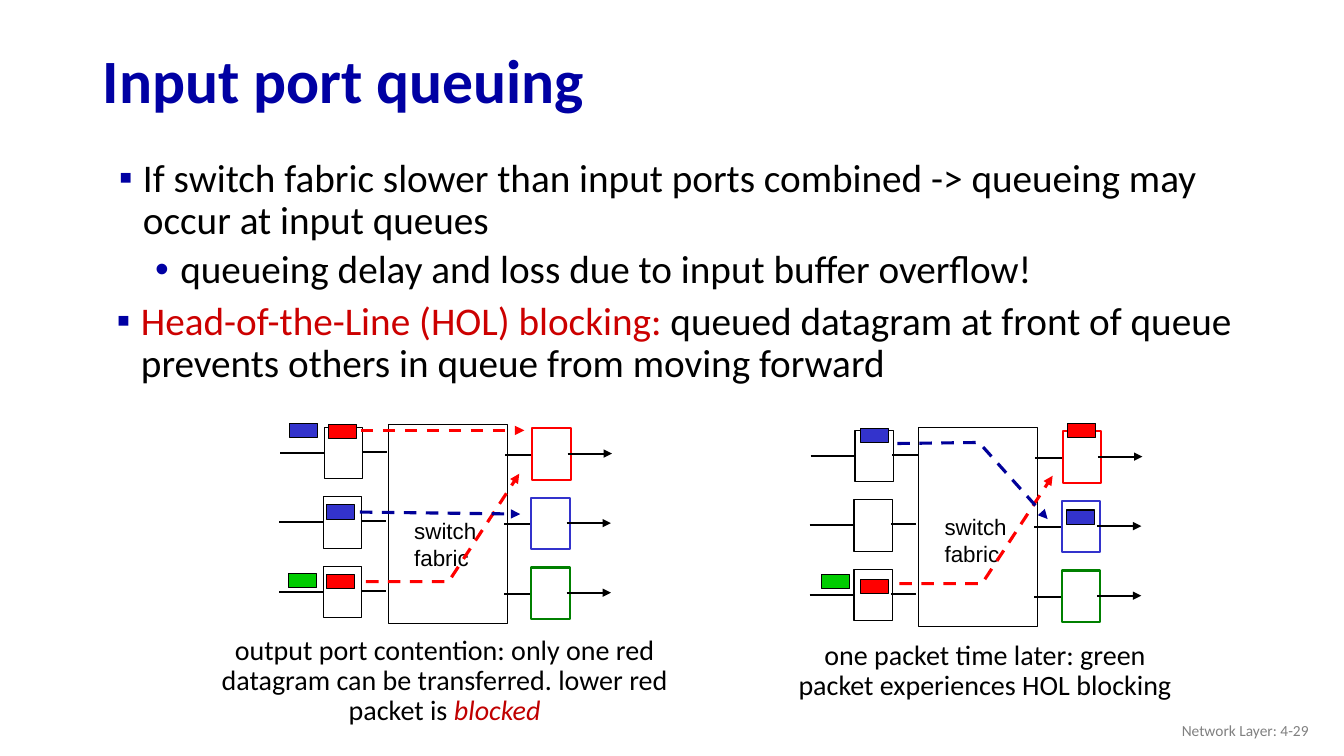
from dataclasses import dataclass

from lxml import etree
from pptx import Presentation
from pptx import util as u
from pptx.dml.color import RGBColor
from pptx.enum import dml, shapes, text
from pptx.oxml.ns import qn
from pptx.util import Inches


@dataclass(frozen=True)
class Theme:
    body_font: str = "Calibri"
    label_font: str = "Arial"
    title_size: int = 44
    body_size: int = 28
    caption_size: int = 20
    label_size: int = 16
    footer_size: int = 11
    black: str = "000000"
    white: str = "FFFFFF"
    navy: str = "0000A3"
    term: str = "CC0000"
    blocked: str = "C00000"
    gray: str = "808080"
    red: str = "FF0000"
    blue: str = "3333CC"
    route_blue: str = "000099"
    port_green: str = "008000"
    green: str = "00CC00"


theme = Theme()


def write(frame, runs, size, font=theme.body_font, align="LEFT", spacing=0.9,
          before=0, bold=False, bullet=None, level=0, margin=0.39, hang=0.24):
    """Add a paragraph; runs is a list of (words, colour, italic)."""
    paragraph = frame.paragraphs[0]
    if paragraph.runs:
        paragraph = frame.add_paragraph()
    paragraph.alignment = text.PP_ALIGN[align]
    paragraph.line_spacing = spacing
    paragraph.space_before = u.Pt(before)
    paragraph.level = level
    if bullet:
        properties = paragraph._p.get_or_add_pPr()
        properties.set("marL", str(Inches(margin)))
        properties.set("indent", str(-Inches(hang)))
        bullet_color = etree.SubElement(properties, qn("a:buClr"))
        etree.SubElement(bullet_color, qn("a:srgbClr"), val=theme.navy)
        etree.SubElement(properties, qn("a:buFont"), typeface=theme.label_font)
        etree.SubElement(properties, qn("a:buChar"), char=bullet)
    for words, color, italic in runs:
        run = paragraph.add_run()
        run.text = words
        run.font.name = font
        run.font.size = u.Pt(size)
        run.font.bold = bold
        run.font.italic = italic
        run.font.color.rgb = RGBColor.from_string(color)


def outline(shape, color, width, dashed=False, arrow=False):
    """Style the line of a shape or connector and drop its shadow."""
    shape.line.color.rgb = RGBColor.from_string(color)
    shape.line.width = u.Pt(width)
    if dashed:
        shape.line.dash_style = dml.MSO_LINE.DASH
    properties = shape._element.spPr
    if arrow:
        etree.SubElement(properties.find(qn("a:ln")), qn("a:tailEnd"), type="triangle")
    etree.SubElement(properties, qn("a:effectLst"))


presentation = Presentation()
presentation.slide_width = Inches(13.33)
presentation.slide_height = Inches(7.5)
slide = presentation.slides.add_slide(presentation.slide_layouts[5])

# Title
title = slide.shapes.title
title.left, title.top = Inches(0.92), Inches(0.34)
title.width, title.height = Inches(11.5), Inches(0.98)
title.text_frame.auto_size = text.MSO_AUTO_SIZE.NONE
title.text_frame.vertical_anchor = text.MSO_ANCHOR.MIDDLE
write(title.text_frame, [("Input port queuing", theme.navy, False)],
      theme.title_size, bold=True)

# Bullets, captions and footer: box, then its paragraphs with their format
first_level = dict(size=theme.body_size, before=10, bullet="▪")
second_level = dict(size=theme.body_size, before=5, bullet="•", level=1,
                    margin=0.76, hang=0.25)
caption = dict(size=theme.caption_size, align="CENTER")
footer = dict(size=theme.footer_size, align="RIGHT", spacing=1.0)
text_boxes = [
    ((0.93, 1.52, 11.5, 1.48), "TOP", [
        ([("If switch fabric slower than input ports combined -> queueing may "
           "occur at input queues", theme.black, False)], first_level),
        ([("queueing delay and loss due to input buffer overflow!",
           theme.black, False)], second_level)]),
    ((0.91, 2.94, 11.5, 1.08), "TOP", [
        ([("Head-of-the-Line (HOL) blocking:", theme.term, False),
          (" queued datagram at front of queue prevents others in queue from "
           "moving forward", theme.black, False)], first_level)]),
    ((1.97, 6.26, 4.88, 1.01), "TOP", [
        ([("output port contention: only one red datagram can be transferred. "
           "lower red packet is ", theme.black, False),
          ("blocked", theme.blocked, True)], caption)]),
    ((7.81, 6.31, 3.92, 0.71), "TOP", [
        ([("one packet time later: green packet experiences HOL blocking",
           theme.black, False)], caption)]),
    ((10.08, 7.05, 3, 0.4), "MIDDLE", [
        ([("Network Layer: 4-29", theme.gray, False)], footer)]),
]
for box, anchor, paragraphs in text_boxes:
    frame = slide.shapes.add_textbox(*map(Inches, box)).text_frame
    frame.word_wrap = True
    frame.vertical_anchor = text.MSO_ANCHOR[anchor]
    for runs, style in paragraphs:
        write(frame, runs, **style)

# Two switch diagrams: fabric corner, label top, packets and dashed routes
diagrams = [
    (3.85, 4.21, 5.08,
     [(3.26, 4.21, theme.red), (3.24, 5.01, theme.blue), (3.24, 5.7, theme.red),
      (2.87, 4.2, theme.blue), (2.86, 5.69, theme.green)],
     [([(3.58, 4.27), (5.2, 4.27)], theme.red),
      ([(3.63, 5.77), (4.45, 5.77), (5.15, 4.7)], theme.red),
      ([(3.57, 5.08), (5.16, 5.1)], theme.route_blue)]),
    (9.11, 4.24, 5.04,
     [(10.59, 4.2, theme.red), (8.53, 4.25, theme.blue), (8.53, 5.75, theme.red),
      (8.15, 5.7, theme.green), (10.58, 5.06, theme.blue)],
     [([(8.92, 5.79), (9.74, 5.79), (10.44, 4.72)], theme.red),
      ([(8.9, 4.4), (9.71, 4.39), (10.39, 5.15)], theme.route_blue)]),
]
ROW_PITCH = 0.69
PORT_SIZE = (0.38, 0.51)
PACKET_SIZE = (0.28, 0.14)
# Offsets from the fabric corner: start, end, height in the row, arrowhead
WIRES = [(1.15, 1.41, 0.3, False), (-0.27, -0.02, 0.27, False),
         (-1.08, -0.64, 0.28, False), (1.77, 2.21, 0.29, True)]

for left, top, label_top, packets, routes in diagrams:
    group = slide.shapes.add_group_shape().shapes
    boxes = [(left, top, 1.18, 1.98, theme.white, theme.black, 0.75)]
    lines = []
    for row, port_color in enumerate([theme.red, theme.blue, theme.port_green]):
        row_left = left + (0.01 if row == 0 else 0)
        row_top = top + row * ROW_PITCH
        boxes += [
            (row_left - 0.64, row_top + 0.03, *PORT_SIZE, theme.white, theme.black, 0.75),
            (row_left + 1.42, row_top + 0.04, *PORT_SIZE, theme.white, port_color, 1.5)]
        for start, end, drop, arrow in WIRES:
            y = row_top + drop
            lines.append(([(row_left + start, y), (row_left + end, y)],
                          theme.black, 1.5, False, arrow))
    boxes += [(x, y, *PACKET_SIZE, color, theme.black, 0.75) for x, y, color in packets]
    lines += [(points, color, 2.25, True, True) for points, color in routes]

    for *place, fill, line, width in boxes:
        box = group.add_shape(shapes.MSO_SHAPE.RECTANGLE, *map(Inches, place))
        box.fill.solid()
        box.fill.fore_color.rgb = RGBColor.from_string(fill)
        outline(box, line, width)

    label = group.add_textbox(Inches(left + 0.16), Inches(label_top),
                              Inches(0.82), Inches(0.64)).text_frame
    label.word_wrap = False
    for word in ("switch", "fabric"):
        write(label, [(word, theme.black, False)], theme.label_size,
              font=theme.label_font, spacing=1.0)

    for points, color, width, dashed, arrow in lines:
        corners = [(Inches(x), Inches(y)) for x, y in points]
        if len(corners) == 2:
            line = group.add_connector(shapes.MSO_CONNECTOR.STRAIGHT,
                                       *corners[0], *corners[1])
        else:
            builder = group.build_freeform(*corners[0])
            builder.add_line_segments(corners[1:], close=False)
            line = builder.convert_to_shape()
            line.fill.background()
        outline(line, color, width, dashed, arrow)

presentation.save("out.pptx")
